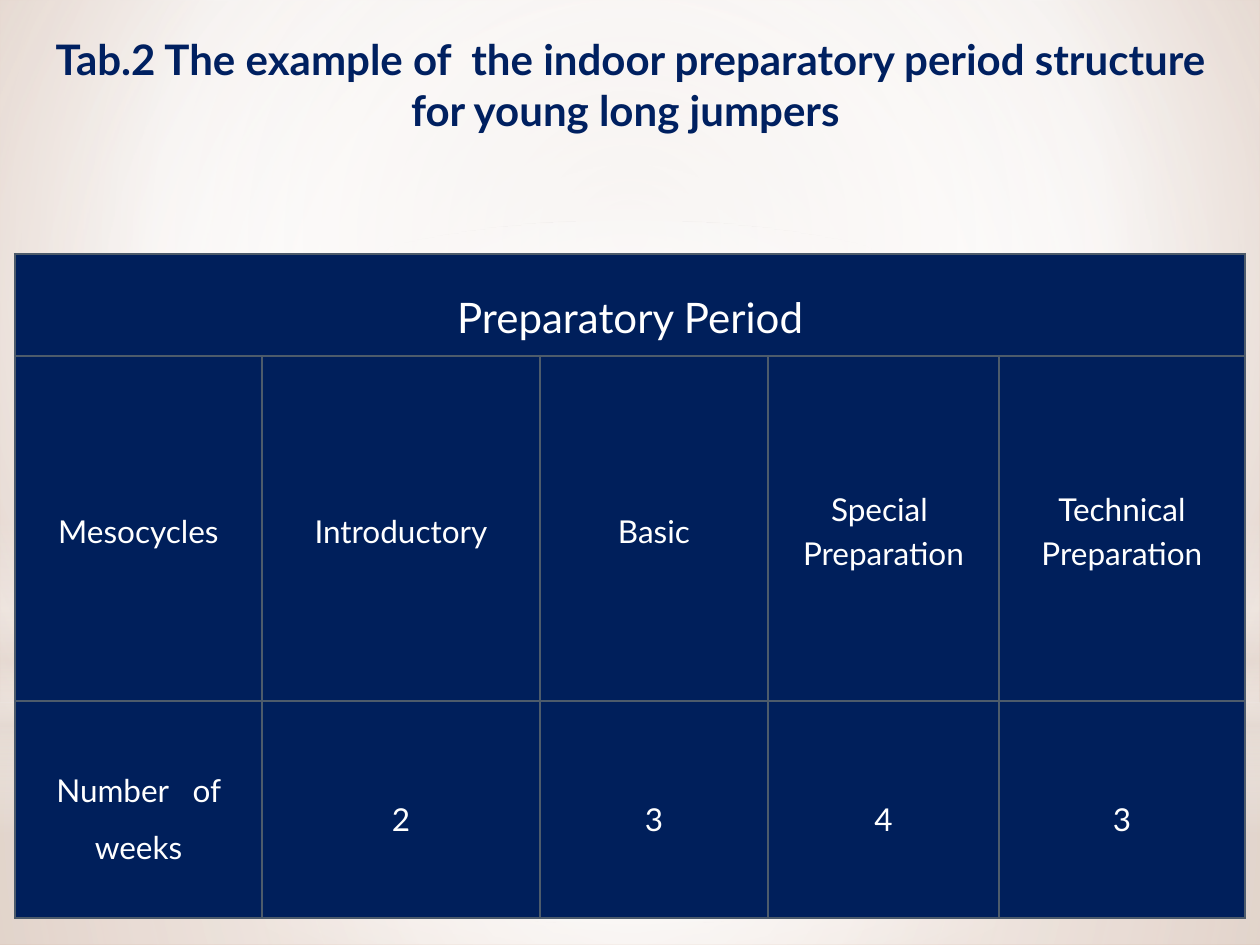
"""Build a slide with a table of the indoor preparatory period for young long jumpers."""
import dataclasses

import lxml.etree
import pptx
import pptx.dml.color
import pptx.enum.shapes
import pptx.enum.text
import pptx.oxml.ns
import pptx.util

EMU_PER_PX = 914400 / 126
CENTER = pptx.enum.text.PP_ALIGN.CENTER
MIDDLE = pptx.enum.text.MSO_ANCHOR.MIDDLE
RECTANGLE = pptx.enum.shapes.MSO_SHAPE.RECTANGLE
OVAL = pptx.enum.shapes.MSO_SHAPE.OVAL
WIDTH, HEIGHT = 1260, 945


@dataclasses.dataclass(frozen=True)
class Theme:
    font: str = "Lato"
    title: str = "002060"
    cell: str = "001F5B"
    text: str = "FFFFFF"
    border: str = "4D5B6B"
    glow: str = "FFFFFF"
    sand: str = "E8DED8"
    backdrop_center: str = "E3D4CB"
    backdrop_edge: str = "CFAD99"
    heading_size: int = 24
    body_size: int = 18
    border_width: float = 1.5


THEME = Theme()
COLUMN_WIDTHS = (247, 278, 228, 231, 246)
ROW_HEIGHTS = (102, 345, 217)
ROWS = (
    ("Preparatory Period",),
    ("Mesocycles", "Introductory", "Basic", "Special \nPreparation", "Technical Preparation"),
    ("Number   of weeks", "2", "3", "4", "3"),
)
ROW_STYLES = (
    (THEME.heading_size, 1.5, 10),
    (THEME.body_size, 1.15, 0),
    (THEME.body_size, 1.5, 10),
)
MIDDLE_FOCUS = (50, 50, 50, 50)
OVERLAYS = (
    (RECTANGLE, (0, 703, WIDTH, 242), MIDDLE_FOCUS,
     ((0, THEME.glow, 91), (37, THEME.glow, 76), (100, THEME.sand, 79))),
    (RECTANGLE, (0, 0, WIDTH, 703), MIDDLE_FOCUS,
     ((0, THEME.glow, 89), (48, THEME.glow, 62), (100, THEME.sand, 79))),
    (RECTANGLE, (0, 519, WIDTH, 315), None,
     ((0, THEME.glow, 0), (29, THEME.glow, 30), (45, THEME.sand, 40),
      (55, THEME.glow, 26), (65, THEME.sand, 60), (100, THEME.glow, 0))),
    (OVAL, (0, 221, WIDTH, 703), MIDDLE_FOCUS,
     ((0, THEME.glow, 100), (56, THEME.glow, 0))),
)


def px(length):
    """Turn pixels into EMU."""
    return pptx.util.Emu(round(length * EMU_PER_PX))


def add_element(parent, tag, **attributes):
    """Append a DrawingML element with the given attributes."""
    element = lxml.etree.SubElement(parent, pptx.oxml.ns.qn(tag))
    for name, value in attributes.items():
        element.set(name, str(value))
    return element


def paint_gradient(owner, stops, focus=None):
    """Turn the solid fill inside owner into a circular or vertical gradient."""
    solid = owner.find(".//" + pptx.oxml.ns.qn("a:solidFill"))
    gradient = add_element(solid.getparent(), "a:gradFill", rotWithShape=1)
    solid.getparent().replace(solid, gradient)
    stop_list = add_element(gradient, "a:gsLst")
    for position, color, opacity in stops:
        stop = add_element(stop_list, "a:gs", pos=position * 1000)
        color_element = add_element(stop, "a:srgbClr", val=color)
        if opacity < 100:
            add_element(color_element, "a:alpha", val=opacity * 1000)
    if focus:
        circle = add_element(gradient, "a:path", path="circle")
        sides = {side: value * 1000 for side, value in zip("ltrb", focus)}
        add_element(circle, "a:fillToRect", **sides)
    else:
        add_element(gradient, "a:lin", ang=90 * 60000, scaled=0)


def paint_background(slide):
    """Give the slide its circular backdrop."""
    slide.background.fill.solid()
    stops = ((0, THEME.backdrop_center, 100), (60, THEME.glow, 100),
             (100, THEME.backdrop_edge, 100))
    paint_gradient(slide.background._cSld, stops, (20, 10, 20, 60))


def add_overlay(slide, kind, box, focus, stops):
    """Add a translucent gradient shape."""
    shape = slide.shapes.add_shape(kind, *map(px, box))
    shape.shadow.inherit = False
    shape.line.fill.background()
    shape.fill.solid()
    paint_gradient(shape._element.spPr, stops, focus)


def format_paragraph(paragraph, size, color, bold=False):
    """Centre a paragraph and style its runs."""
    paragraph.alignment = CENTER
    for run in paragraph.runs:
        run.font.name = THEME.font
        run.font.size = pptx.util.Pt(size)
        run.font.bold = bold
        run.font.color.rgb = pptx.dml.color.RGBColor.from_string(color)


def set_title(slide, text):
    """Place the title in front of the overlays and format it."""
    title = slide.shapes.title
    slide.shapes._spTree.append(title._element)
    title.left, title.top, title.width, title.height = map(px, (25, 26, 1211, 169))
    frame = title.text_frame
    frame.text = text
    frame.word_wrap = True
    frame.auto_size = pptx.enum.text.MSO_AUTO_SIZE.NONE
    frame.vertical_anchor = pptx.enum.text.MSO_ANCHOR.TOP
    frame.margin_top = px(8)
    format_paragraph(frame.paragraphs[0], THEME.heading_size, THEME.title, bold=True)


def format_cell(cell):
    """Set the borders, fill, margins and anchor of a cell."""
    properties = cell._tc.get_or_add_tcPr()
    for tag in ("a:lnL", "a:lnR", "a:lnT", "a:lnB"):
        border = add_element(properties, tag, w=pptx.util.Pt(THEME.border_width))
        add_element(add_element(border, "a:solidFill"), "a:srgbClr", val=THEME.border)
    cell.fill.solid()
    cell.fill.fore_color.rgb = pptx.dml.color.RGBColor.from_string(THEME.cell)
    cell.margin_left = cell.margin_right = px(6)
    cell.margin_top = cell.margin_bottom = 0
    cell.vertical_anchor = MIDDLE


def fill_cell(cell, text, size, line_spacing, space_after):
    """Write centred text into a cell."""
    cell.text_frame.text = text
    for paragraph in cell.text_frame.paragraphs:
        format_paragraph(paragraph, size, THEME.text)
        paragraph.line_spacing = line_spacing
        paragraph.space_after = pptx.util.Pt(space_after)


def add_period_table(slide):
    """Add the table of mesocycles and their weeks."""
    box = (15, 254, sum(COLUMN_WIDTHS), sum(ROW_HEIGHTS))
    table = slide.shapes.add_table(
        len(ROW_HEIGHTS), len(COLUMN_WIDTHS), *map(px, box)).table
    for column, width in zip(table.columns, COLUMN_WIDTHS):
        column.width = px(width)
    for row, height in zip(table.rows, ROW_HEIGHTS):
        row.height = px(height)
    for cell in table.iter_cells():
        format_cell(cell)
    table.cell(0, 0).merge(table.cell(0, len(COLUMN_WIDTHS) - 1))
    for row, texts, style in zip(table.rows, ROWS, ROW_STYLES):
        for cell, text in zip(row.cells, texts):
            fill_cell(cell, text, *style)
    table.cell(1, 0).text_frame.paragraphs[0].space_after = pptx.util.Pt(10)


def main():
    """Build and save the slide."""
    presentation = pptx.Presentation()
    presentation.slide_width, presentation.slide_height = px(WIDTH), px(HEIGHT)
    slide = presentation.slides.add_slide(presentation.slide_layouts.get_by_name("Title Only"))
    paint_background(slide)
    for overlay in OVERLAYS:
        add_overlay(slide, *overlay)
    set_title(slide, "Tab.2 The example of  the indoor preparatory period structure "
                     "for young long jumpers ")
    add_period_table(slide)
    presentation.save("out.pptx")


if __name__ == "__main__":
    main()
